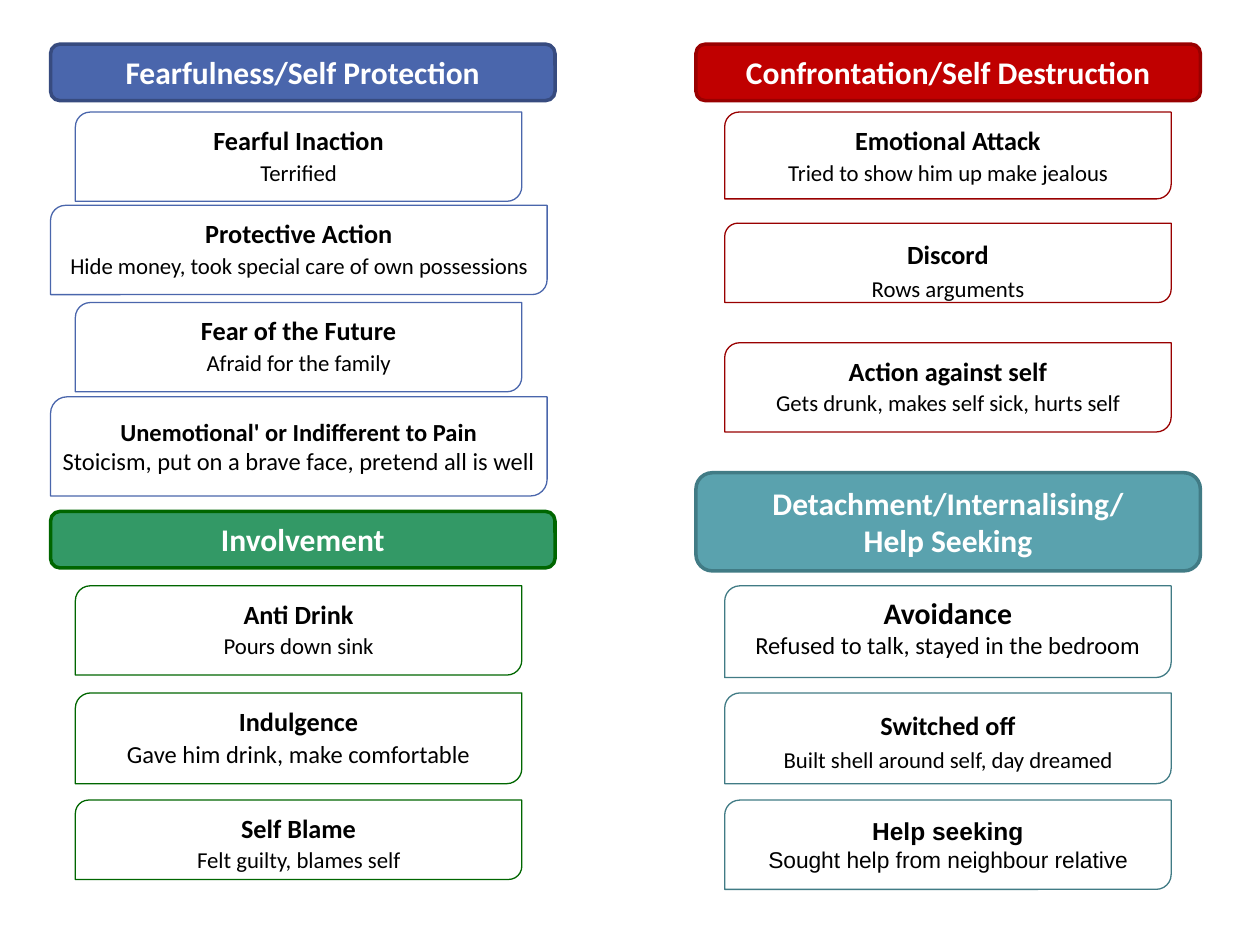
from dataclasses import dataclass

from pptx import Presentation
from pptx.dml.color import RGBColor
from pptx.enum.shapes import MSO_SHAPE as Shape
from pptx.enum.text import MSO_ANCHOR as Anchor, PP_ALIGN as Align
from pptx.util import Cm, Pt

LEFT_CARD, LEFT_EDGE, RIGHT_CARD, RIGHT_EDGE = 1.52, 1.02, 14.61, 14.03
CARD_WIDTH, WIDE_WIDTH, HEADING_WIDTH = 9.0, 10.01, 10.17
LOWER_TOP, LOWER_STEP = 11.81, 2.16


@dataclass
class Card:
    """A coping strategy with its example and its text settings."""
    title: str
    example: str
    top: float
    height: float = 1.8
    wide: bool = False
    title_size: int = 15
    example_size: int = 13
    spacing: float = 0.9
    middle: bool = False
    font: str = "Calibri"


def color(value):
    """Return the colour for a hex string."""
    return RGBColor.from_string(value)


def add_box(page, kind, frame, fill, line, line_width):
    """Add a flat shape with a solid fill and an outline."""
    box = page.shapes.add_shape(kind, *(Cm(length) for length in frame))
    box.shadow.inherit = False
    box.fill.solid()
    box.fill.fore_color.rgb = color(fill)
    box.line.color.rgb = color(line)
    box.line.width = Pt(line_width)
    box.text_frame.word_wrap = True
    box.text_frame.vertical_anchor = Anchor.TOP
    return box


def add_line(box, index, text, size, bold, text_color, font="Calibri"):
    """Write one centred paragraph into a box."""
    frame = box.text_frame
    para = frame.paragraphs[0] if index == 0 else frame.add_paragraph()
    para.text = text
    para.alignment = Align.CENTER
    para.font.name = font
    para.font.size = Pt(size)
    para.font.bold = bold
    para.font.color.rgb = color(text_color)
    return para


def add_heading(page, left, top, height, lines, fill, line):
    """Add a rounded heading bar."""
    frame = (left, top, HEADING_WIDTH, height)
    box = add_box(page, Shape.ROUNDED_RECTANGLE, frame, fill, line, 2)
    for index, text in enumerate(lines):
        add_line(box, index, text, 18, True, "FFFFFF")


def add_card(page, left, line, card):
    """Add a card with a bold title above its example."""
    if card.wide:
        frame = (LEFT_EDGE, card.top, WIDE_WIDTH, card.height)
    else:
        frame = (left, card.top, CARD_WIDTH, card.height)
    box = add_box(page, Shape.ROUND_2_DIAG_RECTANGLE, frame, "FFFFFF", line, 0.75)
    title = add_line(box, 0, card.title, card.title_size, True, "000000", card.font)
    example = add_line(box, 1, card.example, card.example_size, False, "000000", card.font)
    if card.middle:
        box.text_frame.vertical_anchor = Anchor.MIDDLE
        box.text_frame.word_wrap = False
    else:
        box.text_frame.margin_top = Cm(0.23)
        title.line_spacing = example.line_spacing = card.spacing
        example.space_before = Pt(3)


def main():
    """Build the slide of coping strategies."""
    deck = Presentation()
    deck.slide_width, deck.slide_height = Cm(25.4), Cm(19.05)
    page = deck.slides.add_slide(deck.slide_layouts[6])
    lower = [LOWER_TOP + LOWER_STEP * row for row in range(3)]

    headings = [
        (LEFT_EDGE, 0.89, 1.14, ["Fearfulness/Self Protection"], "4A66AC", "374B7F"),
        (RIGHT_EDGE, 0.89, 1.14, ["Confrontation/Self Destruction"], "C00000", "990000"),
        (LEFT_EDGE, 10.31, 1.14, ["Involvement"], "339966", "006600"),
        (RIGHT_EDGE, 9.53, 1.98, ["Detachment/Internalising/", "Help Seeking"],
         "5AA2AE", "417B85"),
    ]
    groups = [
        (LEFT_CARD, "4A66AC", [
            Card("Fearful Inaction", "Terrified", 2.26),
            Card("Protective Action", "Hide money, took special care of own possessions",
                 4.14, wide=True),
            Card("Fear of the Future", "Afraid for the family", 6.1),
            Card("Unemotional' or Indifferent to Pain",
                 "Stoicism, put on a brave face, pretend all is well",
                 8.0, 2.0, wide=True, title_size=14, example_size=14, middle=True),
        ]),
        (RIGHT_CARD, "990000", [
            Card("Emotional Attack", "Tried to show him up make jealous", 2.26, 1.75),
            Card("Discord", "Rows arguments", 4.5, 1.6, spacing=1.0),
            Card("Action against self", "Gets drunk, makes self sick, hurts self", 6.91),
        ]),
        (LEFT_CARD, "006600", [
            Card("Anti Drink", "Pours down sink", lower[0]),
            Card("Indulgence", "Gave him drink, make comfortable", lower[1], 1.83,
                 example_size=14),
            Card("Self Blame", "Felt guilty, blames self", lower[2], 1.6),
        ]),
        (RIGHT_CARD, "417B85", [
            Card("Avoidance", "Refused to talk, stayed in the bedroom", lower[0], 1.85,
                 title_size=17, example_size=14, spacing=0.8),
            Card("Switched off", "Built shell around self, day dreamed", lower[1], 1.83,
                 spacing=1.0),
            Card("Help seeking", "Sought help from neighbour relative", lower[2],
                 title_size=14, middle=True, font="Arial"),
        ]),
    ]
    for left, line, cards in groups:
        for card in cards:
            add_card(page, left, line, card)
    for heading in headings:
        add_heading(page, *heading)
    deck.save("out.pptx")


if __name__ == "__main__":
    main()
